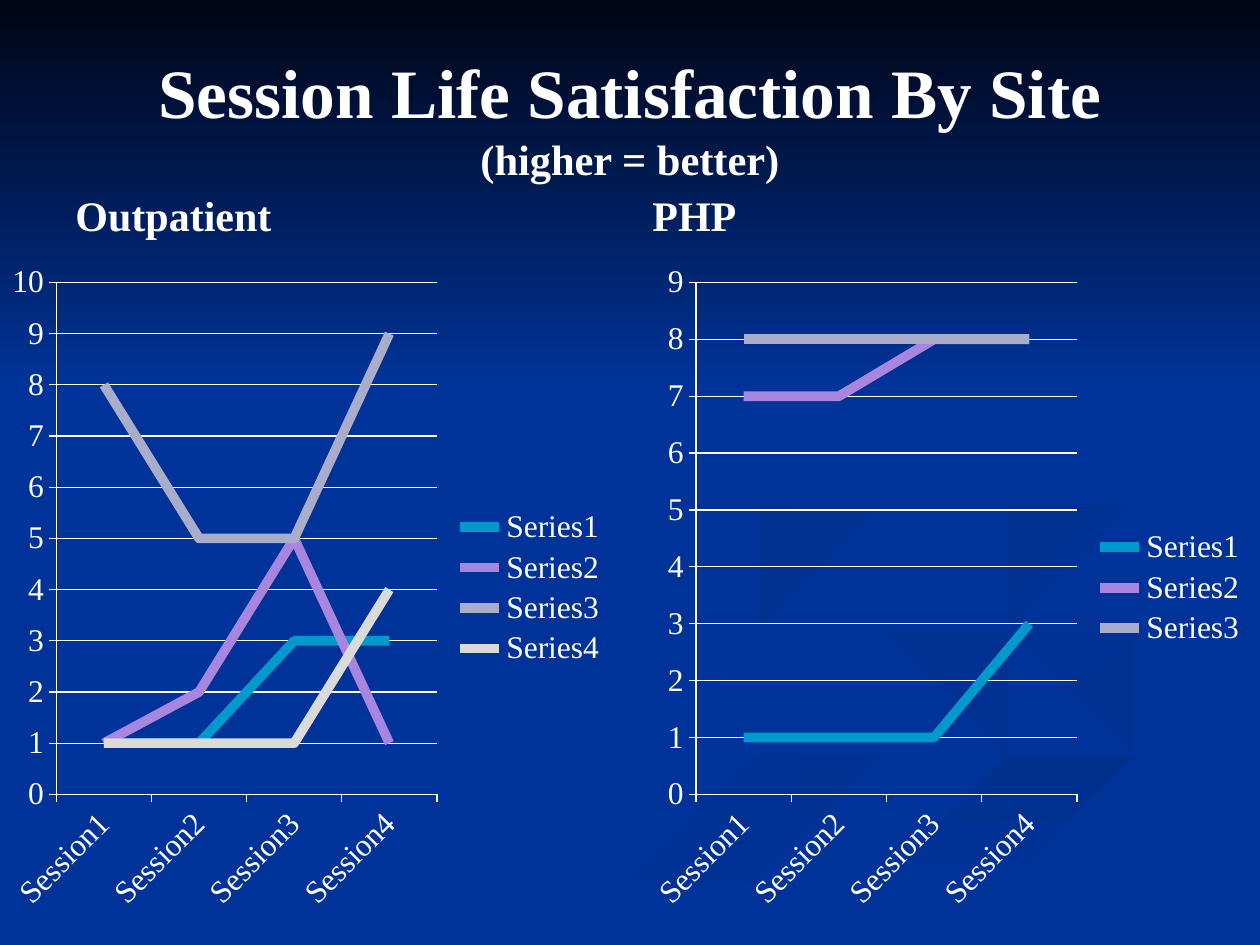
"""Build the slide comparing session life satisfaction at two sites."""
import math

import pptx
import pptx.chart.data
import pptx.dml.color
import pptx.enum.chart
import pptx.enum.shapes
import pptx.enum.text
import pptx.util

W, H = 10, 7.5
FONT, WHITE, BLUE = "Times New Roman", "FFFFFF", "003399"
TITLE = [("Session Life Satisfaction By Site", 39.6), ("(higher = better)", 24.3)]
SESSIONS = ["Session1", "Session2", "Session3", "Session4"]
SITES = [
    ("Outpatient", 10, [(1, 1, 3, 3), (1, 2, 5, 1), (8, 5, 5, 9), (1, 1, 1, 4)]),
    ("PHP", 9, [(1, 1, 1, 3), (7, 7, 8, 8), (8, 8, 8, 8)]),
]
SERIES_COLORS = ["0099CC", "A886E0", "AAADCA", "DADADA"]

# start colour, end colour, clockwise angle, (x, y, half width) along the ribbon
RIBBONS = [
    (BLUE, "003193", 0, [(5.7, 4.6, 0), (6.5, 5.1, 0.03), (7.9, 5.7, 0.08),
                         (6.2, 6.4, 0.12), (3.3, 7.4, 0.1)]),
    (BLUE, "003193", 45, [(7.2, 4.6, 0), (7.9, 5.2, 0.03), (9.3, 5.7, 0.12), (8.9, 6, 0)]),
    ("002F8C", BLUE, 90, [(9.9, 6, 0.13), (7.6, 6.6, 0.12), (5.4, 7.4, 0.1)]),
    ("003091", BLUE, 45, [(9.9, 4.1, 0.09), (8.5, 4.4, 0.08), (8, 4.7, 0.12), (8.2, 4.9, 0)]),
    ("002F8E", BLUE, 45, [(7.6, 2.3, 0), (8.9, 3.4, 0.04), (7.4, 4.1, 0.07),
                          (5.9, 4.6, 0.1), (6.2, 5, 0)]),
]


def rgb(color):
    return pptx.dml.color.RGBColor.from_string(color)


def place(shape, *box):
    shape.left, shape.top, shape.width, shape.height = map(pptx.util.Inches, box)


def style_font(font, size, bold=False):
    font.name, font.size, font.bold = FONT, pptx.util.Pt(size), bold
    font.color.rgb = rgb(WHITE)


def add_run(p, text, size):
    r = p.add_run()
    r.text = text
    style_font(r.font, size, True)


def paint(shape, start, end, angle):
    shape.shadow.inherit = False
    shape.line.fill.background()
    shape.fill.gradient()
    shape.fill.gradient_angle = -angle % 360
    for stop, color in zip(shape.fill.gradient_stops, (start, end)):
        stop.color.rgb = rgb(color)


def smooth_curve(knots, steps=8):
    padded = [knots[0], *knots, knots[-1]]
    curve = []
    for a, b, c, d in zip(padded, padded[1:], padded[2:], padded[3:]):
        for t in (i / steps for i in range(steps)):
            curve.append([q + t * (r - p + t * (2 * p - 5 * q + 4 * r - u
                                                + t * (3 * q - p - 3 * r + u))) / 2
                          for p, q, r, u in zip(a, b, c, d)]
                         if t else list(b))
    return curve + [list(knots[-1])]


def ribbon_outline(knots):
    curve = smooth_curve(knots)
    ends = zip([curve[0], *curve], curve, [*curve[1:], curve[-1]])
    left, right = [], []
    for before, (x, y, half), after in ends:
        dx, dy = after[0] - before[0], after[1] - before[1]
        k = half / math.hypot(dx, dy)
        left.append((x - dy * k, y + dx * k))
        right.append((x + dy * k, y - dx * k))
    return left + right[::-1]


def add_background(s):
    s.background.fill.solid()
    s.background.fill.fore_color.rgb = rgb(BLUE)
    for start, end, angle, knots in RIBBONS:
        points = ribbon_outline(knots)
        builder = s.shapes.build_freeform(*points[0], scale=pptx.util.Inches(1))
        builder.add_line_segments(points[1:], close=True)
        paint(builder.convert_to_shape(), start, end, angle)
    band = s.shapes.add_shape(pptx.enum.shapes.MSO_SHAPE.RECTANGLE, 0, 0, 0, 0)
    place(band, 0, 0, W, 3.08)
    paint(band, "000514", BLUE, 90)


def add_title(s):
    title = s.shapes.title
    s.shapes._spTree.append(title._element)
    place(title, 0.05 * W, 0.04 * H, 0.9 * W, H / 6)
    tf = title.text_frame
    tf.auto_size = pptx.enum.text.MSO_AUTO_SIZE.NONE
    tf.vertical_anchor = pptx.enum.text.MSO_ANCHOR.MIDDLE
    p = tf.paragraphs[0]
    p.alignment = pptx.enum.text.PP_ALIGN.CENTER
    for i, (text, size) in enumerate(TITLE):
        if i:
            p.add_line_break()
        add_run(p, text, size)


def add_heading(s, text, left, width):
    box = s.shapes.add_textbox(0, 0, 0, 0)
    place(box, left, H / 6, width, 0.7)
    tf = box.text_frame
    tf.word_wrap = True
    tf.vertical_anchor = pptx.enum.text.MSO_ANCHOR.BOTTOM
    add_run(tf.paragraphs[0], text, 24)


def add_line_chart(s, rows, top_value, left, width):
    data = pptx.chart.data.CategoryChartData()
    data.categories = SESSIONS
    for i, values in enumerate(rows, 1):
        data.add_series(f"Series{i}", values)
    box = map(pptx.util.Inches, (left, 2, width, 5.33))
    chart = s.shapes.add_chart(pptx.enum.chart.XL_CHART_TYPE.LINE, *box, data).chart
    style_font(chart.font, 18)
    chart.has_title = False
    chart.has_legend = True
    chart.legend.position = pptx.enum.chart.XL_LEGEND_POSITION.RIGHT
    chart.legend.include_in_layout = False
    axis = chart.value_axis
    axis.minimum_scale, axis.maximum_scale, axis.major_unit = 0, top_value, 1
    axis.has_major_gridlines = True
    for line in (axis.major_gridlines.format.line, axis.format.line,
                 chart.category_axis.format.line):
        line.color.rgb = rgb(WHITE)
        line.width = pptx.util.Pt(0.75)
    for series, color in zip(chart.plots[0].series, SERIES_COLORS):
        series.smooth = False
        series.marker.style = pptx.enum.chart.XL_MARKER_STYLE.NONE
        series.format.line.color.rgb = rgb(color)
        series.format.line.width = pptx.util.Pt(5.5)


def main():
    prs = pptx.Presentation()
    prs.slide_width, prs.slide_height = pptx.util.Inches(W), pptx.util.Inches(H)
    s = prs.slides.add_slide(prs.slide_layouts[5])
    add_background(s)
    add_title(s)
    gap, margin = 0.16, 0.5
    column = (W - gap) / 2
    for i, (site, top_value, rows) in enumerate(SITES):
        left = i * (column + gap)
        add_heading(s, site, left + margin * (1 - i), column - margin)
        add_line_chart(s, rows, top_value, left, column)
    prs.save("out.pptx")


if __name__ == "__main__":
    main()
